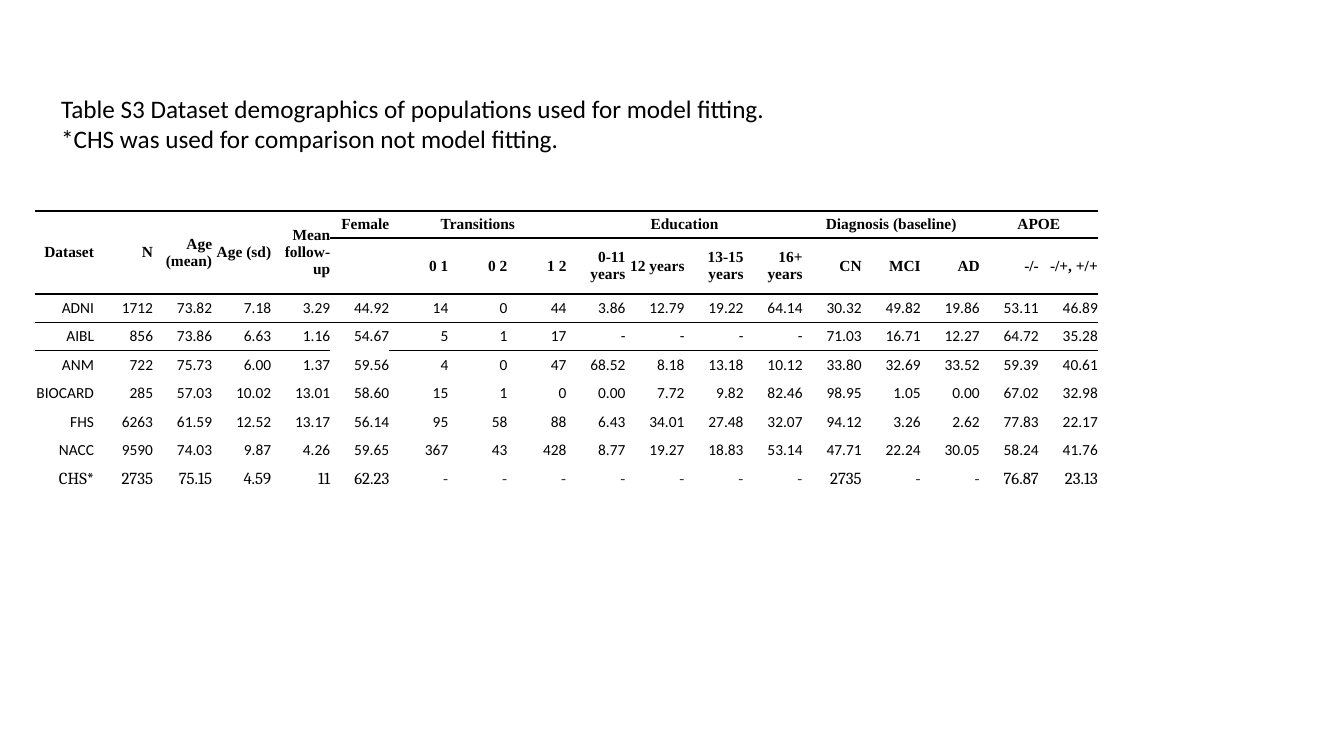
from lxml import etree
from pptx import Presentation
from pptx.dml.color import RGBColor
from pptx.enum.text import MSO_ANCHOR, PP_ALIGN
from pptx.oxml import parse_xml
from pptx.util import Pt

TOP, MIDDLE = MSO_ANCHOR.TOP, MSO_ANCHOR.MIDDLE
LEFT, CENTER, RIGHT = PP_ALIGN.LEFT, PP_ALIGN.CENTER, PP_ALIGN.RIGHT
NS = "http://schemas.openxmlformats.org/drawingml/2006/main"
NO_STYLE = "{2D5ABB26-0587-4C30-8999-92F81FD0307C}"
THEME = {
    "ink": "000000",
    "rule": Pt(1),
    "title": ("Calibri", 18, False),
    "head": ("Times New Roman", 11, True),
    "body": ("Calibri", 11, False),
    "compare": ("Cambria", 12, False),
}


def px(n):
    return round(n * 914400 / 100.8)


def write(tf, text, style, align):
    p = tf.paragraphs[0]
    p.alignment = align
    r = p.add_run()
    r.text = text
    r.font.name, size, r.font.bold = THEME[style]
    r.font.size = Pt(size)
    r.font.color.rgb = RGBColor.from_string(THEME["ink"])


prs = Presentation()
prs.slide_width, prs.slide_height = px(1344), px(756)
s = prs.slides.add_slide(prs.slide_layouts[5])

title = s.shapes.title
title.left, title.top, title.width, title.height = px(51), px(88), px(772), px(72)
tf = title.text_frame
tf.word_wrap = True
tf.vertical_anchor = TOP
write(tf, "Table S3 Dataset demographics of populations used for model fitting. "
      "*CHS was used for comparison not model fitting.", "title", LEFT)

stub_heads = ["Dataset", "N", "Age (mean)", "Age (sd)", "Mean follow-up"]
groups = [
    ("Female", [""]),
    ("Transitions", ["0 1", "0 2", "1 2"]),
    ("Education", ["0-11 years", "12 years", "13-15 years", "16+ years"]),
    ("Diagnosis (baseline)", ["CN", "MCI", "AD"]),
    ("APOE", ["-/-", "-/+, +/+"]),
]
datasets = [
    "ADNI 1712 73.82 7.18 3.29 44.92 14 0 44 3.86 12.79 19.22 64.14 30.32 49.82 19.86 53.11 46.89",
    "AIBL 856 73.86 6.63 1.16 54.67 5 1 17 - - - - 71.03 16.71 12.27 64.72 35.28",
    "ANM 722 75.73 6.00 1.37 59.56 4 0 47 68.52 8.18 13.18 10.12 33.80 32.69 33.52 59.39 40.61",
    "BIOCARD 285 57.03 10.02 13.01 58.60 15 1 0 0.00 7.72 9.82 82.46 98.95 1.05 0.00 67.02 32.98",
    "FHS 6263 61.59 12.52 13.17 56.14 95 58 88 6.43 34.01 27.48 32.07 94.12 3.26 2.62 77.83 22.17",
    "NACC 9590 74.03 9.87 4.26 59.65 367 43 428 8.77 19.27 18.83 53.14 47.71 22.24 30.05 58.24 41.76",
    "CHS* 2735 75.15 4.59 11 62.23 - - - - - - - 2735 - - 76.87 23.13",
]
female = len(stub_heads)
cols = female + sum(len(subheads) for _, subheads in groups)
rows = 2 + len(datasets)
frame = s.shapes.add_table(rows, cols, px(35), px(211), px(1063), px(282))
t = frame.table
t.first_row = t.horz_banding = False
t._tbl.tblPr.find(f"{{{NS}}}tableStyleId").text = NO_STYLE
for col in t.columns:
    col.width = px(1063) // cols
for i, row in enumerate(t.rows):
    row.height = (px(27), px(56))[i] if i < 2 else px(199) // len(datasets)

ruled = [
    range(cols),
    range(female, cols),
    range(cols),
    [c for c in range(cols) if c != female],
]
for i in range(rows):
    for c in range(cols):
        cell = t.cell(i, c)
        cell.margin_left = cell.margin_right = cell.margin_top = cell.margin_bottom = 0
        cell.vertical_anchor = MIDDLE
        cell.fill.background()
        if i < len(ruled) and c in ruled[i]:
            ln = parse_xml(f'<a:lnT xmlns:a="{NS}" w="{THEME["rule"]}"/>')
            fill = etree.SubElement(ln, f"{{{NS}}}solidFill")
            etree.SubElement(fill, f"{{{NS}}}srgbClr", val=THEME["ink"])
            cell._tc.tcPr.insert(0, ln)

for c, head in enumerate(stub_heads):
    t.cell(0, c).merge(t.cell(1, c))
    write(t.cell(0, c).text_frame, head, "head", RIGHT)

c = female
for group, subheads in groups:
    span = len(subheads)
    if span > 1:
        t.cell(0, c).merge(t.cell(0, c + span - 1))
    write(t.cell(0, c).text_frame, group, "head", CENTER if span > 1 else RIGHT)
    for k, subhead in enumerate(subheads):
        if subhead:
            write(t.cell(1, c + k).text_frame, subhead, "head", RIGHT)
    c += span

for i, line in enumerate(datasets, 2):
    style = "compare" if line.startswith("CHS") else "body"
    for c, value in enumerate(line.split()):
        write(t.cell(i, c).text_frame, value, style, RIGHT)

prs.save("out.pptx")
